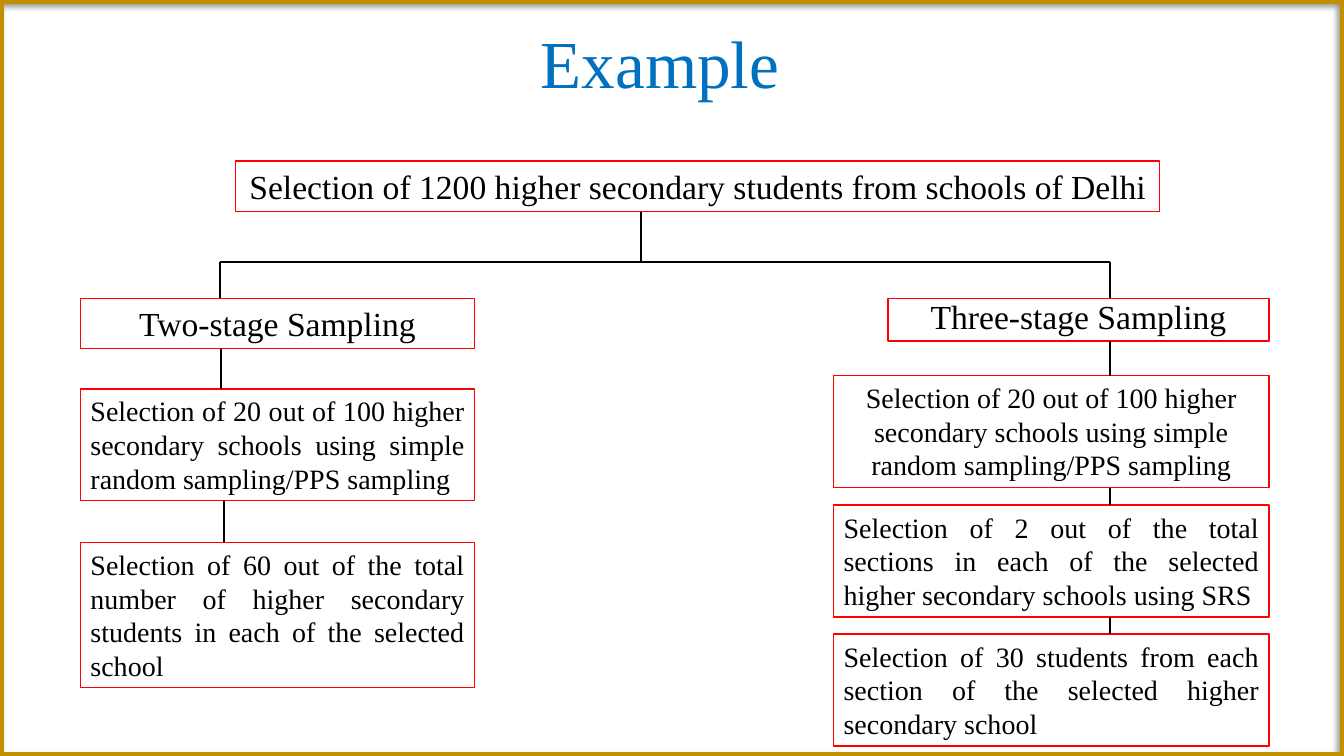
import pptx
import pptx.util
import pptx.dml.color
import pptx.enum.shapes
import pptx.enum.text
import pptx.oxml
import pptx.oxml.ns
from pptx.util import Cm

# Content
TITLE = "Example"
ROOT = "Selection of 1200 higher secondary students from schools of Delhi"
SCHOOLS = ("Selection of 20 out of 100 higher secondary schools "
           "using simple random sampling/PPS sampling")

# Each box: text, left, top, width, height (cm), format
LEFT = [
    ("Two-stage Sampling", 2.03, 7.52, 9.93, 1.27, dict(size=24)),
    (SCHOOLS, 2.03, 9.8, 9.93, 2.82, dict(align="JUSTIFY")),
    ("Selection of 60 out of the total number of higher secondary students "
     "in each of the selected school",
     2.03, 13.67, 9.93, 3.66, dict(align="JUSTIFY")),
]
RIGHT = [
    ("Three-stage Sampling", 22.38, 7.52, 9.6, 1.07, dict(size=24, space=0.8)),
    (SCHOOLS, 21.01, 9.47, 10.97, 2.82, {}),
    ("Selection of 2 out of the total sections in each of the selected "
     "higher secondary schools using SRS",
     21.01, 12.73, 10.97, 2.82, dict(align="JUSTIFY")),
    ("Selection of 30 students from each section of the selected "
     "higher secondary school",
     21.01, 15.98, 10.97, 2.82, dict(align="JUSTIFY")),
]
STEM, BUS = 16.15, 6.6
SIDES = [(LEFT, [5.54, 5.56, 5.64]), (RIGHT, [27.97] * 4)]

FONT = "Times New Roman"
WIDE, HIGH = 33.87, 19.05

deck = pptx.Presentation()
deck.slide_width, deck.slide_height = Cm(WIDE), Cm(HIGH)
slide = deck.slides.add_slide(deck.slide_layouts[5])


def hue(code):
    return pptx.dml.color.RGBColor.from_string(code)


def write(frame, text, size=20, color="000000", align="CENTER",
          anchor="TOP", space=1.0, wrap=True):
    frame.word_wrap = wrap
    frame.vertical_anchor = getattr(pptx.enum.text.MSO_ANCHOR, anchor)
    para = frame.paragraphs[0]
    para.alignment = getattr(pptx.enum.text.PP_ALIGN, align)
    para.line_spacing = space
    run = para.add_run()
    run.text = text
    run.font.name = FONT
    run.font.size = pptx.util.Pt(size)
    run.font.color.rgb = hue(color)


def outline(left, top, width, height, color, weight):
    box = slide.shapes.add_shape(pptx.enum.shapes.MSO_SHAPE.RECTANGLE,
                                 Cm(left), Cm(top), Cm(width), Cm(height))
    box.shadow.inherit = False
    box.fill.background()
    box.line.color.rgb = hue(color)
    box.line.width = pptx.util.Pt(weight)
    return box


def node(text, left, top, width, height, form):
    box = outline(left, top, width, height, "FF0000", 1)
    write(box.text_frame, text, **form)


def link(x1, y1, x2, y2):
    line = slide.shapes.add_connector(pptx.enum.shapes.MSO_CONNECTOR.STRAIGHT,
                                      Cm(x1), Cm(y1), Cm(x2), Cm(y2))
    line.line.color.rgb = hue("000000")
    line.line.width = pptx.util.Pt(1.5)
    line._element.spPr.append(pptx.oxml.parse_xml(
        f'<a:effectLst {pptx.oxml.ns.nsdecls("a")}/>'))


# Title
title = slide.shapes.title
title.left, title.top = Cm(2.03), Cm(0.25)
title.width, title.height = Cm(29.21), Cm(2.87)
write(title.text_frame, TITLE, size=48, color="0070C0", anchor="MIDDLE",
      space=0.9)

# Root box, stem and crossbar
node(ROOT, 5.94, 4.06, 23.29, 1.27, dict(size=24, anchor="MIDDLE", wrap=False))
link(STEM, 5.33, STEM, BUS)
link(SIDES[0][1][0], BUS, SIDES[1][1][0], BUS)

# Two branches: each box hangs from the one above
for boxes, drops in SIDES:
    above = BUS
    for (text, left, top, width, height, form), x in zip(boxes, drops):
        node(text, left, top, width, height, form)
        link(x, above, x, top)
        above = top + height

# Slide frame with a soft shadow towards the lower left
frame = outline(0, 0, WIDE, HIGH, "BF9000", 6)
glow = frame._element.spPr.find(pptx.oxml.ns.qn("a:effectLst"))
glow.append(pptx.oxml.parse_xml(
    f'<a:outerShdw {pptx.oxml.ns.nsdecls("a")} blurRad="50800" dist="38100" '
    'dir="8100000" algn="tr" rotWithShape="0"><a:srgbClr val="000000">'
    '<a:alpha val="40000"/></a:srgbClr></a:outerShdw>'))

deck.save("out.pptx")
